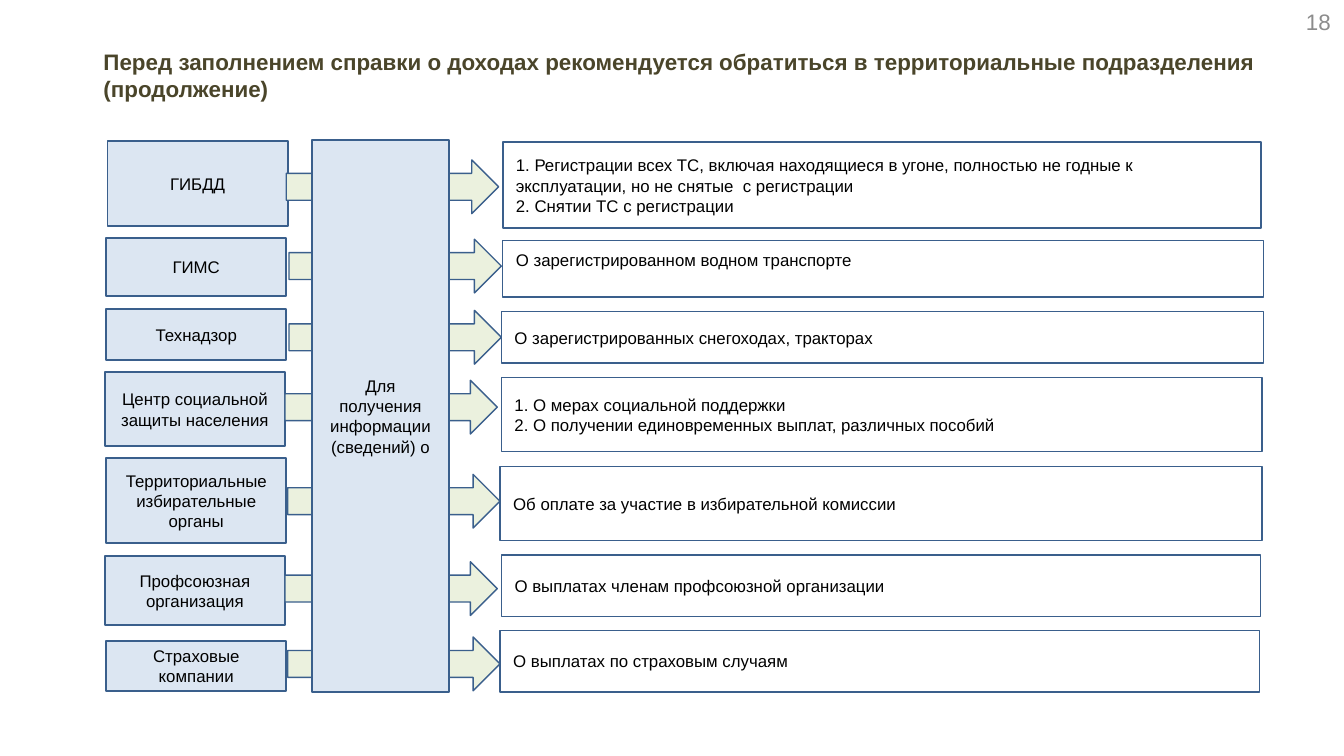
from dataclasses import dataclass

from pptx import Presentation
from pptx.dml.color import RGBColor
from pptx.enum.shapes import MSO_SHAPE
from pptx.enum.text import MSO_ANCHOR, PP_ALIGN
from pptx.util import Inches, Pt

PROCESS, ARROW = MSO_SHAPE.FLOWCHART_PROCESS, MSO_SHAPE.RIGHT_ARROW
TOP, MIDDLE = MSO_ANCHOR.TOP, MSO_ANCHOR.MIDDLE
LEFT, CENTER, RIGHT = PP_ALIGN.LEFT, PP_ALIGN.CENTER, PP_ALIGN.RIGHT


@dataclass(frozen=True)
class Theme:
    """Colours, font and type sizes of the slide."""
    font: str = "Arial"
    heading_size: float = 12
    body_size: float = 9
    heading: str = "4A452A"
    number: str = "8C8C8C"
    body: str = "000000"
    outline: str = "3A5F8C"
    office: str = "DCE6F2"
    arrow: str = "EBF1DE"
    detail: str = "FFFFFF"


@dataclass(frozen=True)
class Row:
    """One office and its information; columns are left and width, spans top and height."""
    office: str
    office_left: float
    office_span: tuple
    arrow_left: float
    arrow_top: float
    details: tuple
    detail_column: tuple
    detail_span: tuple
    detail_line: float = 0.75
    detail_anchor: MSO_ANCHOR = MIDDLE


THEME = Theme()
SLIDE_WIDTH = Inches(10)
SLIDE_HEIGHT = SLIDE_WIDTH * 9 // 16
OFFICE_WIDTH = 1.34
ARROW_WIDTH, ARROW_HEIGHT = 1.58, 0.4
PURPOSE_COLUMN, PURPOSE_SPAN = (2.32, 1.02), (1.04, 4.11)

TITLE = ("Перед заполнением справки о доходах рекомендуется обратиться "
         "в территориальные подразделения (продолжение)")
PURPOSE = "Для получения информации (сведений) о"
ROWS = (
    Row("ГИБДД", 0.8, (1.05, 0.63), 2.13, 1.19,
        ("1. Регистрации всех ТС, включая находящиеся в угоне, полностью не годные "
         "к эксплуатации, но не снятые  с регистрации",
         "2. Снятии ТС с регистрации"),
        (3.74, 5.64), (1.06, 0.64), detail_line=1),
    Row("ГИМС", 0.79, (1.77, 0.43), 2.15, 1.78,
        ("О зарегистрированном водном транспорте",),
        (3.74, 5.66), (1.79, 0.42), detail_anchor=TOP),
    Row("Технадзор", 0.79, (2.3, 0.38), 2.15, 2.31,
        ("О зарегистрированных снегоходах, тракторах",),
        (3.73, 5.67), (2.32, 0.38)),
    Row("Центр социальной защиты населения", 0.78, (2.77, 0.55), 2.12, 2.83,
        ("1. О мерах социальной поддержки",
         "2. О получении единовременных выплат, различных пособий"),
        (3.73, 5.66), (2.81, 0.55)),
    Row("Территориальные избирательные органы", 0.79, (3.41, 0.63), 2.14, 3.53,
        ("Об оплате за участие в избирательной комиссии",),
        (3.72, 5.67), (3.47, 0.55)),
    Row("Профсоюзная организация", 0.78, (4.14, 0.51), 2.12, 4.18,
        ("О выплатах членам профсоюзной организации",),
        (3.73, 5.65), (4.13, 0.46)),
    Row("Страховые компании", 0.79, (4.77, 0.37), 2.14, 4.74,
        ("О выплатах по страховым случаям",),
        (3.72, 5.65), (4.69, 0.46)),
)


def frame(column, span):
    """Return left, top, width and height of a column crossed with a span."""
    return [Inches(value) for value in (column[0], span[0], column[1], span[1])]


def write(text_frame, lines, size, color, align, anchor=MIDDLE, bold=False):
    """Write each line as a paragraph with one formatted run."""
    text_frame.word_wrap = True
    text_frame.vertical_anchor = anchor
    for index, line in enumerate(lines):
        paragraph = text_frame.add_paragraph() if index else text_frame.paragraphs[0]
        paragraph.alignment = align
        run = paragraph.add_run()
        run.text = line
        run.font.name = THEME.font
        run.font.size = Pt(size)
        run.font.bold = bold
        run.font.color.rgb = RGBColor.from_string(color)


def add_block(slide, preset, column, span, fill, line_width):
    """Add an outlined, filled shape without a shadow."""
    block = slide.shapes.add_shape(preset, *frame(column, span))
    block.shadow.inherit = False
    block.fill.solid()
    block.fill.fore_color.rgb = RGBColor.from_string(fill)
    block.line.color.rgb = RGBColor.from_string(THEME.outline)
    block.line.width = Pt(line_width)
    return block


def add_label(slide, column, span, text):
    """Add a tinted box with centred text."""
    label = add_block(slide, PROCESS, column, span, THEME.office, 1)
    write(label.text_frame, [text], THEME.body_size, THEME.body, CENTER)


def add_detail(slide, row):
    """Add the white box that lists the information of a row."""
    detail = add_block(slide, PROCESS, row.detail_column, row.detail_span,
                       THEME.detail, row.detail_line)
    detail.text_frame.margin_top = Inches(0.07 if row.detail_anchor == TOP else 0.05)
    write(detail.text_frame, row.details, THEME.body_size, THEME.body, LEFT,
          row.detail_anchor)


def add_row(slide, row):
    """Add the office, arrow and detail of one row."""
    add_label(slide, (row.office_left, OFFICE_WIDTH), row.office_span, row.office)
    add_block(slide, ARROW, (row.arrow_left, ARROW_WIDTH),
              (row.arrow_top, ARROW_HEIGHT), THEME.arrow, 0.75)
    add_detail(slide, row)


def add_heading(slide):
    """Fill the title placeholder and add the page number."""
    title = slide.shapes.title
    title.left, title.top, title.width, title.height = frame((0.67, 8.82), (0.23, 0.66))
    write(title.text_frame, [TITLE], THEME.heading_size, THEME.heading, LEFT, bold=True)
    number = slide.shapes.add_textbox(*frame((7.67, 2.33), (0.01, 0.3)))
    write(number.text_frame, ["18"], THEME.heading_size, THEME.number, RIGHT)


def main():
    """Build the slide and save it."""
    deck = Presentation()
    deck.slide_width, deck.slide_height = SLIDE_WIDTH, SLIDE_HEIGHT
    slide = deck.slides.add_slide(deck.slide_layouts[5])
    add_heading(slide)
    for row in ROWS:
        add_row(slide, row)
    add_label(slide, PURPOSE_COLUMN, PURPOSE_SPAN, PURPOSE)
    deck.save("out.pptx")


if __name__ == "__main__":
    main()
